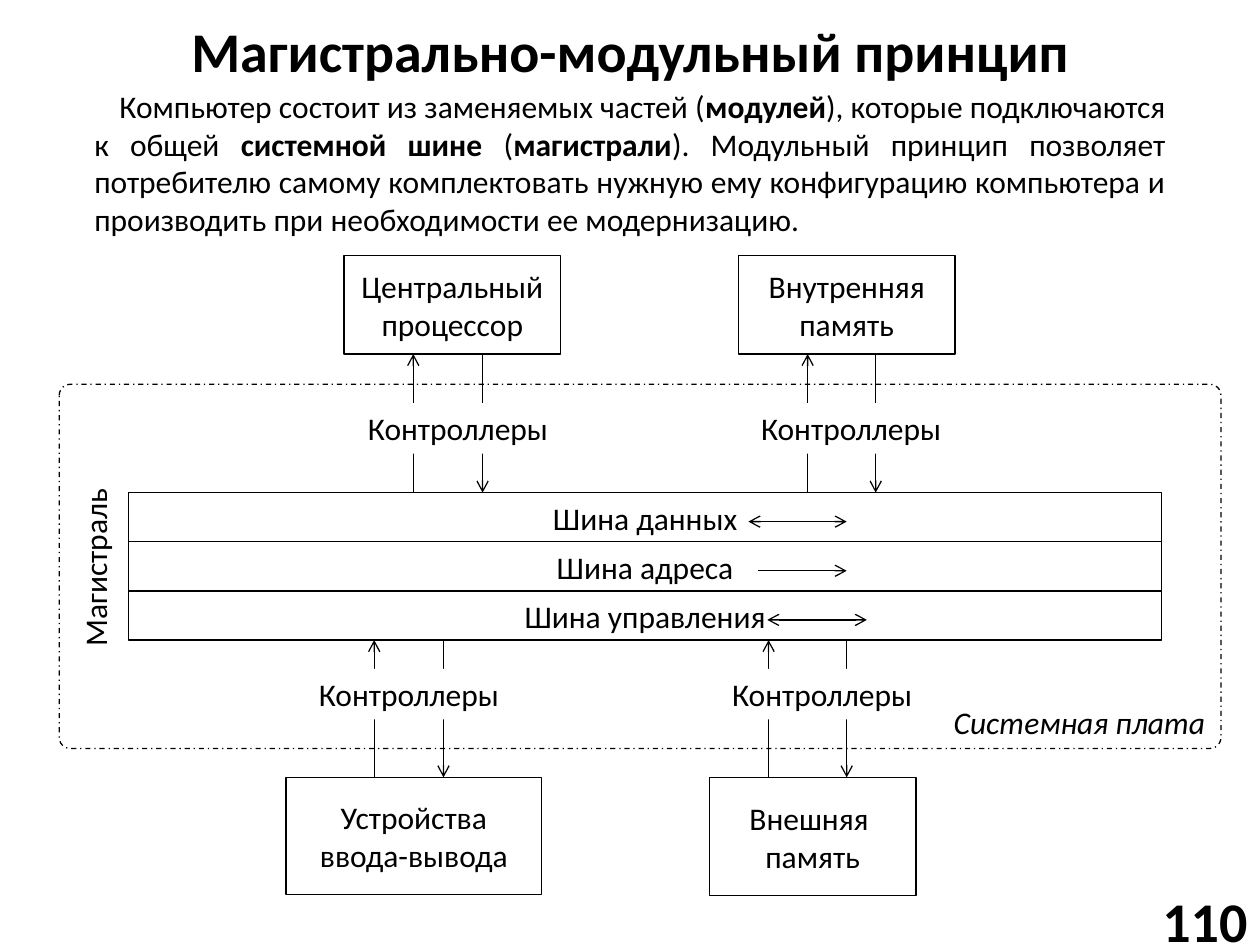
from dataclasses import dataclass

from lxml.etree import SubElement
from pptx import Presentation
from pptx.dml.color import RGBColor
from pptx.enum.dml import MSO_LINE
from pptx.enum.shapes import MSO_CONNECTOR, MSO_SHAPE
from pptx.enum.text import MSO_ANCHOR as Anchor, PP_ALIGN as Align
from pptx.oxml.ns import qn
from pptx.util import Inches, Pt


@dataclass(frozen=True)
class Theme:
    font: str = "Calibri"
    ink: RGBColor = RGBColor(0, 0, 0)
    paper: RGBColor = RGBColor(255, 255, 255)
    heading: Pt = Pt(32)
    body: Pt = Pt(18)
    stroke: Pt = Pt(0.75)


THEME = Theme()
BUS_TOP, BUS_STEP = 3.91, 0.39
BUSES = [  # name, arrow start, arrow end, two-way
    ("Шина данных", 5.94, 6.72, True),
    ("Шина адреса", 6.02, 6.72, False),
    ("Шина управления", 6.09, 6.88, True),
]
BUS_BOTTOM = BUS_TOP + BUS_STEP * len(BUSES)
MODULES = [  # name, box, x of up arrow, x of down arrow, controller left, top
    ("Центральный процессор", (2.73, 2.03, 1.72, 0.78), 3.28, 3.83, 2.66, 3.2),
    ("Внутренняя память", (5.86, 2.03, 1.72, 0.78), 6.41, 6.95, 5.78, 3.2),
    ("Устройства ввода-вывода", (2.27, 6.17, 2.03, 0.93), 2.97, 3.52, 2.27, 5.31),
    ("Внешняя \nпамять", (5.63, 6.17, 1.64, 0.94), 6.1, 6.72, 5.55, 5.31),
]
INTRO = [  # text, bold
    ("Компьютер состоит из заменяемых частей (", False),
    ("модулей", True),
    ("), которые подключаются к общей ", False),
    ("системной шине ", True),
    ("(", False),
    ("магистрали", True),
    ("). Модульный принцип позволяет потребителю самому комплектовать нужную "
     "ему конфигурацию компьютера и производить при необходимости ее "
     "модернизацию.", False),
]


def place(shape, box):
    shape.left, shape.top, shape.width, shape.height = map(Inches, box)


def style(paragraph, align, size=THEME.body, bold=False, italic=False):
    paragraph.alignment = align
    font = paragraph.font
    font.name, font.size, font.bold, font.italic = THEME.font, size, bold, italic
    font.color.rgb = THEME.ink


def write(shape, text, align=Align.CENTER, anchor=Anchor.TOP, wrap=True, **look):
    frame = shape.text_frame
    frame.text = text
    frame.word_wrap = wrap
    frame.vertical_anchor = anchor
    for paragraph in frame.paragraphs:
        style(paragraph, align, **look)


def add_label(slide, box, text, **look):
    label = slide.shapes.add_textbox(*map(Inches, box))
    write(label, text, **look)
    return label


def add_box(slide, box, kind=MSO_SHAPE.RECTANGLE, filled=True, outlined=True):
    shape = slide.shapes.add_shape(kind, *map(Inches, box))
    shape.shadow.inherit = False
    if filled:
        shape.fill.solid()
        shape.fill.fore_color.rgb = THEME.paper
    else:
        shape.fill.background()
    if outlined:
        shape.line.color.rgb = THEME.ink
        shape.line.width = THEME.stroke
    else:
        shape.line.fill.background()
    return shape


def add_arrow(slide, start, end, two_way=False):
    arrow = slide.shapes.add_connector(
        MSO_CONNECTOR.STRAIGHT, *map(Inches, (*start, *end)))
    arrow.line.color.rgb = THEME.ink
    arrow.line.width = THEME.stroke
    line = arrow.line._get_or_add_ln()
    for tip in (["a:headEnd"] if two_way else []) + ["a:tailEnd"]:
        SubElement(line, qn(tip), type="arrow")
    SubElement(arrow._element.spPr, qn("a:effectLst"))


def add_heading(slide, box, text):
    title = slide.shapes.title
    place(title, box)
    write(title, text, anchor=Anchor.MIDDLE, size=THEME.heading, bold=True)


def add_intro(slide, box):
    intro = slide.shapes.add_textbox(*map(Inches, box))
    intro.text_frame.word_wrap = True
    paragraph = intro.text_frame.paragraphs[0]
    style(paragraph, Align.JUSTIFY)
    paragraph._p.get_or_add_pPr().set("indent", str(Inches(0.2)))
    for text, bold in INTRO:
        run = paragraph.add_run()
        run.text, run.font.bold = text, bold


def add_buses(slide, box):
    left, top, width, height = box
    row_height = height / len(BUSES)
    for row, (name, start, end, two_way) in enumerate(BUSES):
        y = top + row * row_height
        bus = add_box(slide, (left, y, width, row_height), filled=False)
        write(bus, name)
        middle = y + 0.23
        add_arrow(slide, (start, middle), (end, middle), two_way)
    trunk = add_label(slide, (left - 1.01, top + 0.38, 1.48, 0.4),
                      "Магистраль", align=Align.LEFT)
    trunk.rotation = 270


def add_module(slide, box, name, up_x, down_x, controller_left, controller_top):
    """Draw a module, its two arrows to the buses and the controllers on them."""
    _, top, _, height = box
    write(add_box(slide, box), name, anchor=Anchor.MIDDLE)
    if top < BUS_TOP:
        upper, lower = top + height, BUS_TOP
    else:
        upper, lower = BUS_BOTTOM, top
    add_arrow(slide, (up_x, lower), (up_x, upper))
    add_arrow(slide, (down_x, upper), (down_x, lower))
    controllers = add_box(
        slide, (controller_left, controller_top, 1.95, 0.4), outlined=False)
    write(controllers, "Контроллеры")


def add_board(slide, box):
    left, top, width, height = box
    board = add_box(slide, box, MSO_SHAPE.ROUNDED_RECTANGLE, filled=False)
    board.adjustments[0] = 0.03
    board.line.dash_style = MSO_LINE.DASH_DOT
    add_label(slide, (left + width - 2.22, top + height - 0.41, 2.22, 0.4),
              "Системная плата", align=Align.LEFT, wrap=False, italic=True)


def main():
    deck = Presentation()
    deck.slide_width, deck.slide_height = Inches(10), Inches(7.5)
    slide = deck.slides.add_slide(deck.slide_layouts[5])
    add_heading(slide, (0.28, 0.05, 9.45, 0.69), "Магистрально-модульный принцип")
    add_intro(slide, (0.65, 0.64, 8.7, 1.31))
    add_buses(slide, (1.02, BUS_TOP, 8.2, BUS_BOTTOM - BUS_TOP))
    for name, box, *links in MODULES:
        add_module(slide, box, name, *links)
    add_board(slide, (0.47, 3.05, 9.22, 2.89))
    add_label(slide, (8.86, 7.1, 1.14, 0.4), "110", align=Align.RIGHT,
              anchor=Anchor.MIDDLE, size=THEME.heading, bold=True)
    deck.save("out.pptx")


if __name__ == "__main__":
    main()
